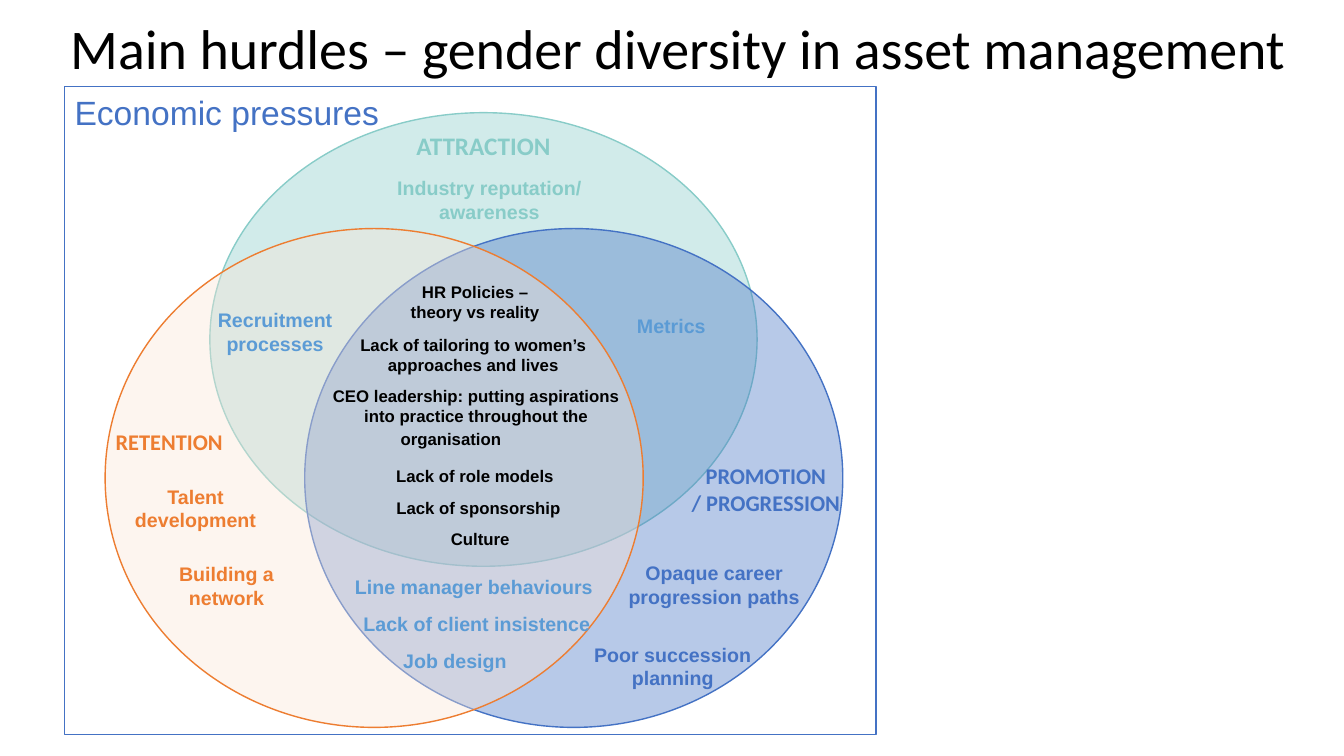
from dataclasses import dataclass

from lxml import etree
from pptx import Presentation
from pptx.dml.color import RGBColor
from pptx.enum.shapes import MSO_SHAPE
from pptx.enum.text import MSO_ANCHOR, MSO_AUTO_SIZE, PP_ALIGN
from pptx.oxml.ns import qn
from pptx.util import Cm, Pt

RECTANGLE, OVAL = MSO_SHAPE.RECTANGLE, MSO_SHAPE.OVAL
TOP, MIDDLE = MSO_ANCHOR.TOP, MSO_ANCHOR.MIDDLE
LEFT, CENTER = PP_ALIGN.LEFT, PP_ALIGN.CENTER
FIT_TEXT = MSO_AUTO_SIZE.SHAPE_TO_FIT_TEXT


@dataclass(frozen=True)
class Theme:
    ink: str = "000000"
    blue: str = "4472C4"
    teal: str = "88CCC8"
    orange: str = "ED7D31"
    peach: str = "FBE5D6"
    overlap: str = "5B9BD5"
    heading_font: str = "Calibri"
    body_font: str = "Arial"
    title_size: int = 40
    frame_size: int = 24
    large_heading: int = 18
    heading: int = 16
    hurdle: int = 14
    core: int = 12
    circle_alpha: int = 38


THEME = Theme()

# Circles: box within the frame (cm), fill, outline
CIRCLES = [
    ((3.66, 0.66, 13.79, 11.43), THEME.teal, THEME.teal),
    ((6.05, 3.58, 13.56, 12.57), THEME.blue, THEME.blue),
    ((1.02, 3.58, 13.56, 12.57), THEME.peach, THEME.orange),
]

# Circle headings: text, box within the frame (cm), colour, size
HEADINGS = [
    ("ATTRACTION", (8.46, 0.99, 4.19, 1.02), THEME.teal, THEME.large_heading),
    ("RETENTION", (0.58, 8.48, 4.11, 0.94), THEME.orange, THEME.heading),
    ("PROMOTION\n/ PROGRESSION", (15.27, 9.35, 4.8, 1.63), THEME.blue, THEME.heading),
]

# Hurdles of one circle or of two, grouped by colour
HURDLES = {
    THEME.teal: [
        ("Industry reputation/ awareness", (7.57, 2.13, 6.27, 1.45)),
    ],
    THEME.orange: [
        ("Talent\ndevelopment", (0.58, 9.91, 5.44, 1.45)),
        ("Building a network", (2.11, 11.86, 3.94, 1.45)),
    ],
    THEME.blue: [
        ("Opaque career\nprogression paths", (13.87, 11.84, 5.0, 1.45)),
        ("Poor succession\nplanning", (12.67, 13.89, 5.31, 1.45)),
    ],
    THEME.overlap: [
        ("Recruitment\nprocesses", (2.64, 5.46, 5.33, 1.27)),
        ("Metrics", (13.51, 5.61, 3.56, 0.74)),
        ("Line manager behaviours", (6.86, 12.19, 6.91, 0.86)),
        ("Lack of client insistence", (6.86, 13.11, 7.06, 0.86)),
        ("Job design\t", (8.28, 14.05, 3.94, 0.74)),
    ],
}

# Hurdles shared by all three circles
CORE_HURDLES = [
    ("HR Policies – theory vs reality", (8.15, 4.8, 4.39, 1.27)),
    ("Lack of tailoring to women’s\napproaches and lives", (6.4, 6.12, 7.8, 1.27)),
    ("CEO leadership: putting aspirations into practice throughout the organisation\t",
     (6.27, 7.42, 8.2, 1.88)),
    ("Lack of role models", (8.08, 9.42, 4.52, 0.76)),
    ("Lack of sponsorship", (8.08, 10.24, 4.7, 0.76)),
    ("Culture", (8.28, 11.02, 4.39, 0.76)),
]


def lengths(box):
    return [Cm(value) for value in box]


def within(frame, box):
    left, top, width, height = box
    return frame[0] + left, frame[1] + top, width, height


def write_run(paragraph, text, font, size, colour, bold=False):
    run = paragraph.add_run()
    run.text = text
    run.font.name, run.font.size, run.font.bold = font, Pt(size), bold
    run.font.color.rgb = RGBColor.from_string(colour)


def draw_outline(slide, kind, box, line, fill=None):
    outline = slide.shapes.add_shape(kind, *lengths(box))
    outline.shadow.inherit = False
    outline.line.color.rgb = RGBColor.from_string(line)
    outline.line.width = Pt(1)
    if fill is None:
        outline.fill.background()
    else:
        outline.fill.solid()
        outline.fill.fore_color.rgb = RGBColor.from_string(fill)
        # Translucent fill
        colour = outline.fill._xPr.find(qn("a:solidFill"))[0]
        etree.SubElement(colour, qn("a:alpha")).set("val", str(THEME.circle_alpha * 1000))
    return outline


def add_label(slide, box, text, font, size, colour):
    label = slide.shapes.add_textbox(*lengths(box)).text_frame
    label.word_wrap = True
    label.auto_size = FIT_TEXT
    for number, line in enumerate(text.split("\n")):
        paragraph = label.add_paragraph() if number else label.paragraphs[0]
        paragraph.alignment = CENTER
        words, tab, _ = line.partition("\t")
        write_run(paragraph, words, font, size, colour, bold=True)
        if tab:
            write_run(paragraph, tab, font, THEME.hurdle, colour, bold=True)


def add_title(slide, box, text):
    title = slide.shapes.add_textbox(*lengths(box)).text_frame
    title.word_wrap = True
    title.vertical_anchor = MIDDLE
    title.paragraphs[0].line_spacing = 0.9
    write_run(title.paragraphs[0], text, THEME.heading_font, THEME.title_size, THEME.ink)


def add_hurdle_diagram(slide, frame):
    # Surrounding pressures
    pressures = draw_outline(slide, RECTANGLE, frame, THEME.blue).text_frame
    pressures.word_wrap = True
    pressures.vertical_anchor = TOP
    pressures.paragraphs[0].alignment = LEFT
    write_run(pressures.paragraphs[0], "Economic pressures",
              THEME.body_font, THEME.frame_size, THEME.blue)

    # Overlapping circles
    for box, fill, line in CIRCLES:
        draw_outline(slide, OVAL, within(frame, box), line, fill)

    # Headings and hurdles
    for text, box, colour, size in HEADINGS:
        add_label(slide, within(frame, box), text, THEME.heading_font, size, colour)
    for colour, hurdles in HURDLES.items():
        for text, box in hurdles:
            add_label(slide, within(frame, box), text, THEME.body_font, THEME.hurdle, colour)
    for text, box in CORE_HURDLES:
        add_label(slide, within(frame, box), text, THEME.body_font, THEME.core, THEME.ink)


def main():
    deck = Presentation()
    deck.slide_width, deck.slide_height = Cm(33.87), Cm(19.05)
    slide = deck.slides.add_slide(deck.slide_layouts[6])
    add_title(slide, (1.52, 0.36, 31.78, 1.88),
              "Main hurdles – gender diversity in asset management")
    add_hurdle_diagram(slide, (1.63, 2.18, 20.45, 16.33))
    deck.save("out.pptx")


if __name__ == "__main__":
    main()
